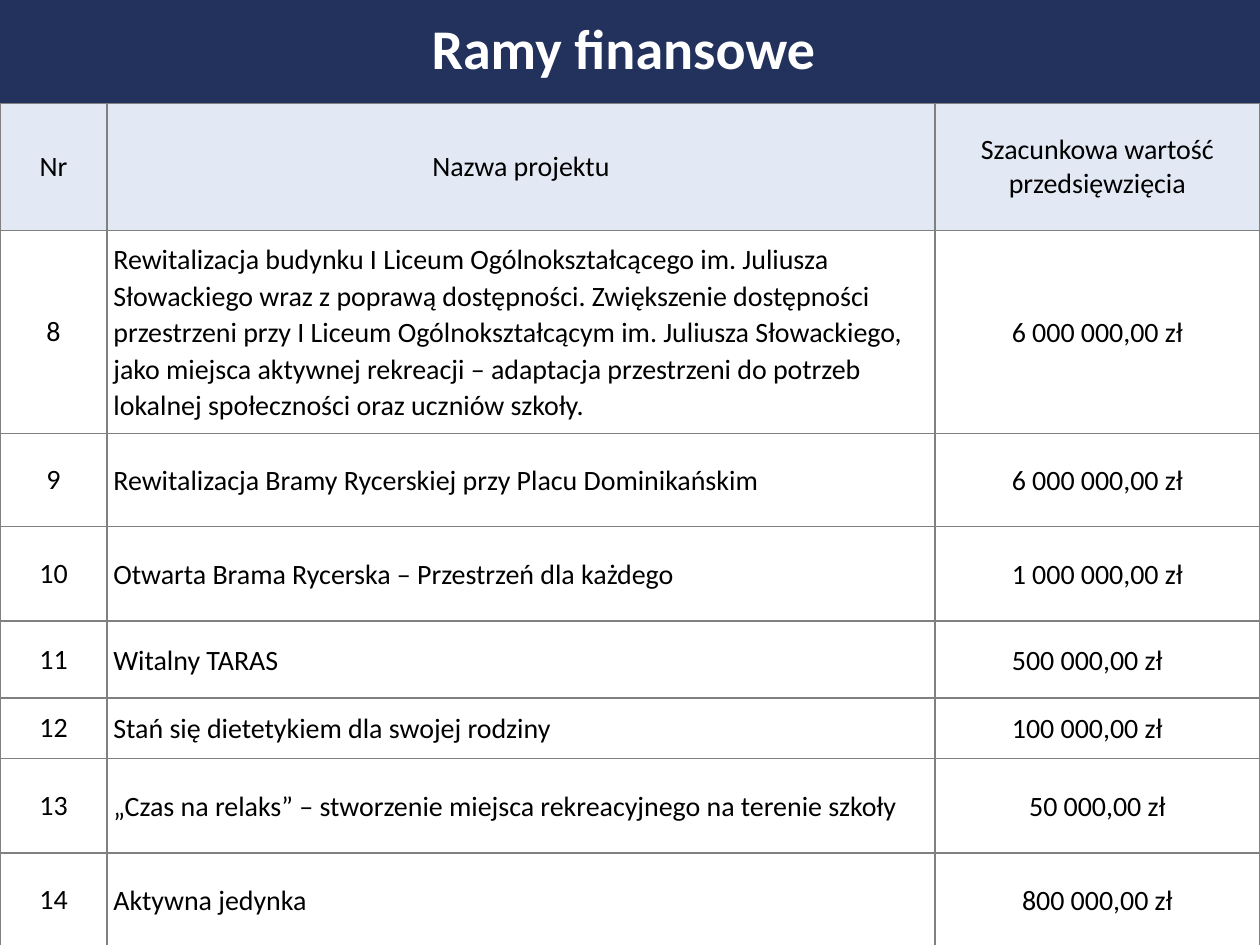
from lxml.etree import SubElement
from pptx import Presentation
from pptx.dml.color import RGBColor
from pptx.enum.shapes import MSO_SHAPE
from pptx.enum.text import MSO_ANCHOR, PP_ALIGN
from pptx.oxml.ns import qn
from pptx.util import Inches, Pt

COLORS = {"navy": "23325D", "header": "E3E8F5", "white": "FFFFFF",
          "text": "000000", "border": "808080"}
FONT = "Calibri"
TITLE_HEIGHT = 0.82
COLUMN_WIDTHS = [0.85, 6.57, 2.58]
ROW_HEIGHTS = [1.01, 1.61, 0.74, 0.75, 0.61, 0.48, 0.75, 0.75]
SHIFTED_AMOUNTS = {"11", "12"}  # amounts set slightly left of centre
ROWS = [
    ("Nr", "Nazwa projektu", "Szacunkowa wartość przedsięwzięcia"),
    ("8", "Rewitalizacja budynku I Liceum Ogólnokształcącego im. Juliusza Słowackiego "
          "wraz z poprawą dostępności. Zwiększenie dostępności przestrzeni przy I Liceum "
          "Ogólnokształcącym im. Juliusza Słowackiego, jako miejsca aktywnej rekreacji – "
          "adaptacja przestrzeni do potrzeb lokalnej społeczności oraz uczniów szkoły.",
     "6 000 000,00 zł"),
    ("9", "Rewitalizacja Bramy Rycerskiej przy Placu Dominikańskim", "6 000 000,00 zł"),
    ("10", "Otwarta Brama Rycerska – Przestrzeń dla każdego", "1 000 000,00 zł"),
    ("11", "Witalny TARAS", "500 000,00 zł"),
    ("12", "Stań się dietetykiem dla swojej rodziny", "100 000,00 zł"),
    ("13", "„Czas na relaks” – stworzenie miejsca rekreacyjnego na terenie szkoły",
     "50 000,00 zł"),
    ("14", "Aktywna jedynka", "800 000,00 zł"),
]


def add_text(paragraph, text, size, color, bold=False):
    run = paragraph.add_run()
    run.text = text
    run.font.name = FONT
    run.font.size = Pt(size)
    run.font.bold = bold
    run.font.color.rgb = RGBColor.from_string(COLORS[color])


def style_cell(cell, fill):
    properties = cell._tc.get_or_add_tcPr()
    for side in ("lnL", "lnR", "lnT", "lnB"):
        line = SubElement(properties, qn(f"a:{side}"), w=str(Pt(1)))
        solid = SubElement(line, qn("a:solidFill"))
        SubElement(solid, qn("a:srgbClr"), val=COLORS["border"])
    cell.fill.solid()
    cell.fill.fore_color.rgb = RGBColor.from_string(COLORS[fill])
    cell.vertical_anchor = MSO_ANCHOR.MIDDLE
    cell.margin_top = cell.margin_bottom = 0


presentation = Presentation()
presentation.slide_width = Inches(10)
presentation.slide_height = Inches(7.5)
slide = presentation.slides.add_slide(presentation.slide_layouts[6])

# Title band
band = slide.shapes.add_shape(MSO_SHAPE.RECTANGLE, 0, 0,
                              presentation.slide_width, Inches(TITLE_HEIGHT))
band.shadow.inherit = False
band.fill.solid()
band.fill.fore_color.rgb = RGBColor.from_string(COLORS["navy"])
band.line.fill.background()
band.text_frame.word_wrap = True
band.text_frame.vertical_anchor = MSO_ANCHOR.MIDDLE
title = band.text_frame.paragraphs[0]
title.alignment = PP_ALIGN.CENTER
title.line_spacing = 0.9
add_text(title, "Ramy finansowe ", 32, "white", bold=True)

# Project table
table = slide.shapes.add_table(
    len(ROWS), len(COLUMN_WIDTHS), 0, Inches(TITLE_HEIGHT),
    presentation.slide_width, Inches(sum(ROW_HEIGHTS))).table
table.horz_banding = False
for column, width in zip(table.columns, COLUMN_WIDTHS):
    column.width = Inches(width)

for row_index, (values, height) in enumerate(zip(ROWS, ROW_HEIGHTS)):
    table.rows[row_index].height = Inches(height)
    is_header = row_index == 0
    for column_index, value in enumerate(values):
        cell = table.cell(row_index, column_index)
        style_cell(cell, "header" if is_header else "white")
        is_body_text = not is_header and column_index > 0
        cell.margin_left = cell.margin_right = Inches(0.05 if is_body_text else 0.06)
        if column_index == 2 and values[0] in SHIFTED_AMOUNTS:
            cell.margin_right = Inches(0.21)
        paragraph = cell.text_frame.paragraphs[0]
        is_name = is_body_text and column_index == 1
        paragraph.alignment = PP_ALIGN.LEFT if is_name else PP_ALIGN.CENTER
        paragraph.space_before = paragraph.space_after = Pt(6)
        if is_body_text:
            paragraph.line_spacing = 1.07
        add_text(paragraph, value, 16, "text")

presentation.save("out.pptx")
